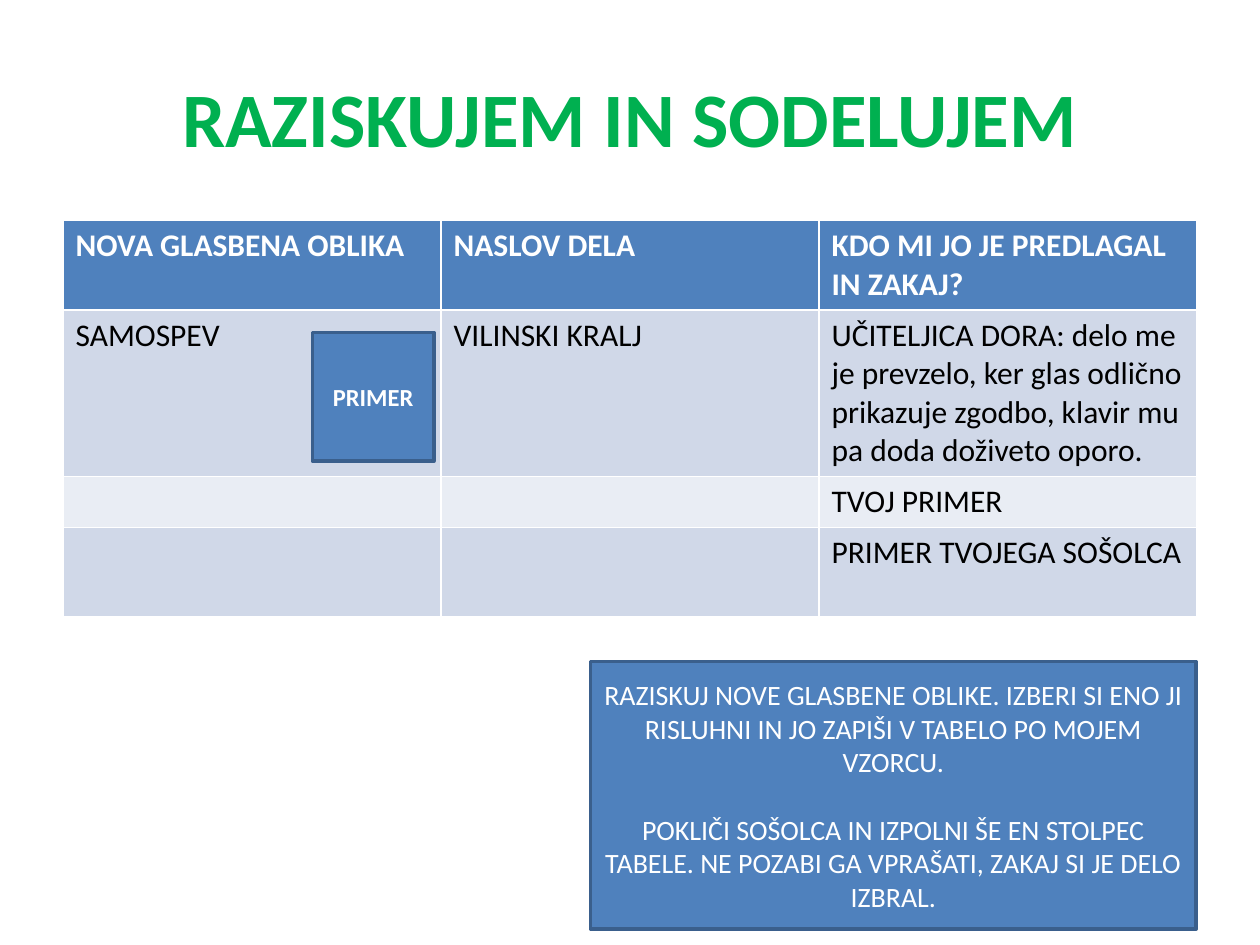
from pptx import Presentation
from pptx.dml.color import RGBColor
from pptx.enum.shapes import MSO_SHAPE
from pptx.enum.text import MSO_ANCHOR, PP_ALIGN
from pptx.util import Pt

RECT = MSO_SHAPE.RECTANGLE
MIDDLE = MSO_ANCHOR.MIDDLE
CENTER, LEFT = PP_ALIGN.CENTER, PP_ALIGN.LEFT

GREEN = RGBColor(0x00, 0xB0, 0x50)
BLUE = RGBColor(0x4F, 0x81, 0xBD)
DARK_BLUE = RGBColor(0x3A, 0x5F, 0x8C)
BAND = RGBColor(0xD0, 0xD8, 0xE8)
LIGHT_BAND = RGBColor(0xE9, 0xED, 0xF4)
WHITE = RGBColor(0xFF, 0xFF, 0xFF)
BLACK = RGBColor(0x00, 0x00, 0x00)

ROWS = [
    ("NOVA GLASBENA OBLIKA", "NASLOV DELA", "KDO MI JO JE PREDLAGAL IN ZAKAJ?"),
    ("SAMOSPEV", "VILINSKI KRALJ",
     "UČITELJICA DORA: delo me je prevzelo, ker glas odlično prikazuje "
     "zgodbo, klavir mu pa doda doživeto oporo."),
    ("", "", "TVOJ PRIMER"),
    ("", "", "PRIMER TVOJEGA SOŠOLCA"),
]
ROW_HEIGHTS = [51, 95, 29.2, 51]
TASKS = [
    "RAZISKUJ NOVE GLASBENE OBLIKE. IZBERI SI ENO JI RISLUHNI IN JO ZAPIŠI "
    "V TABELO PO MOJEM VZORCU.",
    "POKLIČI SOŠOLCA IN IZPOLNI ŠE EN STOLPEC TABELE. NE POZABI GA VPRAŠATI, "
    "ZAKAJ SI JE DELO IZBRAL.",
]


def write(tf, *texts, size=18, color=BLACK, bold=False, align=LEFT, gap=0):
    """Fill a text frame with one formatted paragraph per text."""
    for i, text in enumerate(texts):
        p = tf.add_paragraph() if i else tf.paragraphs[0]
        p.alignment = align
        if i:
            p.space_before = Pt(gap)
        p.font.size = Pt(size)
        if text:
            r = p.add_run()
            r.text = text
            r.font.name = "Calibri"
            r.font.size = Pt(size)
            r.font.bold = bold
            r.font.color.rgb = color


class Deck:
    """Holds the presentation style and the current slide."""

    def __init__(self):
        self.prs = Presentation()
        self.prs.slide_width, self.prs.slide_height = Pt(720), Pt(540)
        self.s = self.prs.slides.add_slide(self.prs.slide_layouts[5])

    def title(self, text, x, y, w, h):
        sp = self.s.shapes.title
        sp.left, sp.top, sp.width, sp.height = Pt(x), Pt(y), Pt(w), Pt(h)
        sp.text_frame.vertical_anchor = MIDDLE
        write(sp.text_frame, text, size=44, color=GREEN, bold=True, align=CENTER)

    def table(self, rows, heights, x, y, w):
        shape = self.s.shapes.add_table(
            len(rows), len(rows[0]), Pt(x), Pt(y), Pt(w), Pt(sum(heights)))
        table = shape.table
        for i, (texts, height) in enumerate(zip(rows, heights)):
            table.rows[i].height = Pt(height)
            head = i == 0
            fill = BLUE if head else BAND if i % 2 else LIGHT_BAND
            for j, text in enumerate(texts):
                cell = table.cell(i, j)
                cell.fill.solid()
                cell.fill.fore_color.rgb = fill
                write(cell.text_frame, text, color=WHITE if head else BLACK, bold=head)

    def box(self, *texts, x, y, w, h, **style):
        sp = self.s.shapes.add_shape(RECT, Pt(x), Pt(y), Pt(w), Pt(h))
        sp.shadow.inherit = False
        sp.fill.solid()
        sp.fill.fore_color.rgb = BLUE
        sp.line.color.rgb = DARK_BLUE
        sp.line.width = Pt(2)
        tf = sp.text_frame
        tf.word_wrap = True
        tf.vertical_anchor = MIDDLE
        write(tf, *texts, color=WHITE, align=CENTER, **style)


def main():
    """Build the slide and save it."""
    deck = Deck()
    deck.title("RAZISKUJEM IN SODELUJEM", 36, 21.6, 648, 90)
    deck.table(ROWS, ROW_HEIGHTS, 36, 126, 648)
    deck.box("PRIMER", x=178.5, y=190, w=69.5, h=73.5, size=14, bold=True)
    deck.box(*TASKS, x=337.5, y=378, w=346, h=153, size=16, gap=19.2)
    deck.prs.save("out.pptx")


if __name__ == "__main__":
    main()
